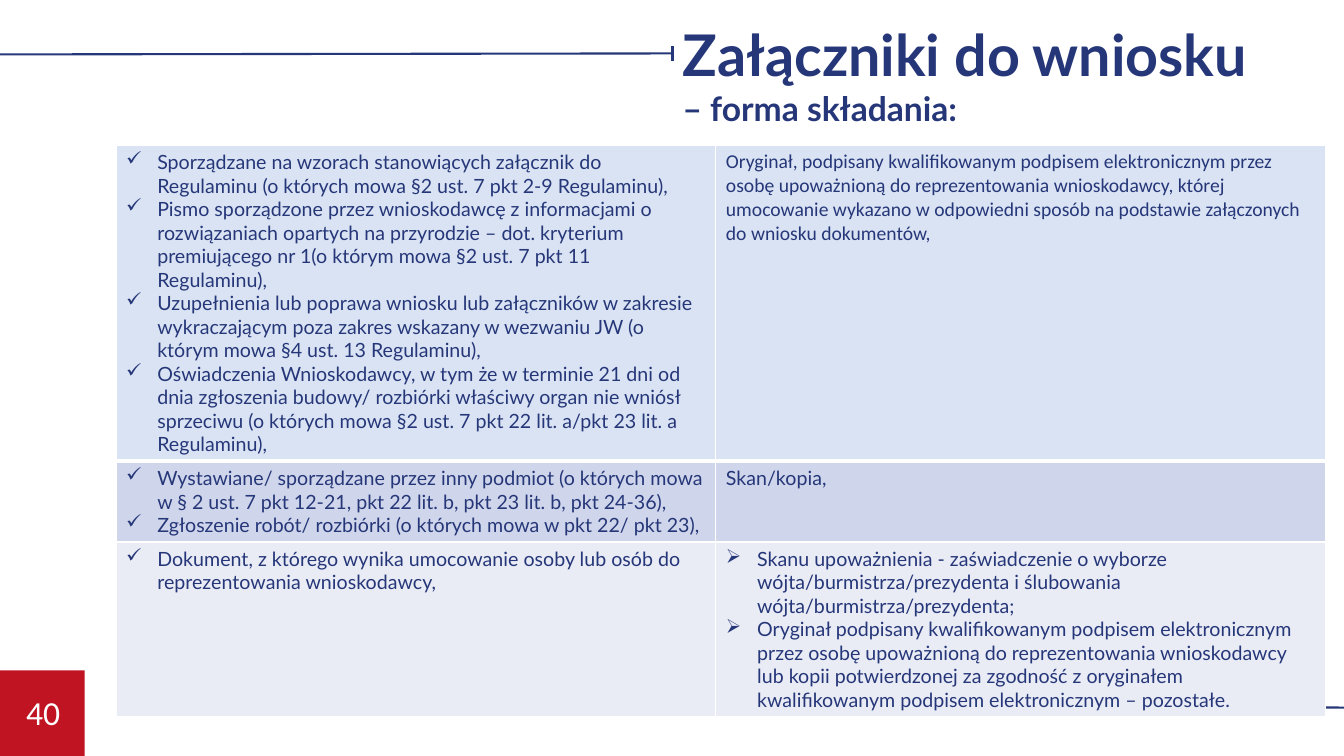
"""Build the slide on how attachments to the application are submitted."""
from dataclasses import dataclass

from lxml import etree
from pptx import Presentation
from pptx.dml.color import RGBColor
from pptx.enum.shapes import MSO_CONNECTOR, MSO_SHAPE
from pptx.enum.text import MSO_ANCHOR, MSO_AUTO_SIZE, PP_ALIGN
from pptx.oxml.ns import qn
from pptx.util import Inches, Pt

STRAIGHT = MSO_CONNECTOR.STRAIGHT
RECTANGLE = MSO_SHAPE.RECTANGLE
TOP = MSO_ANCHOR.TOP
LEFT = PP_ALIGN.LEFT
NO_AUTOFIT = MSO_AUTO_SIZE.NONE

NAVY, RED, WHITE = "263779", "C01422", "FFFFFF"
TITLE_ONLY = 5
INDENT = Inches(0.31)
COLUMN_WIDTHS = (5.95, 6.05)


@dataclass
class Rule:
    """A straight navy line, in inches."""
    x1: float
    y1: float
    x2: float
    y2: float


@dataclass
class Entry:
    """The contents of one table cell."""
    lines: list[str]
    bullet: str = ""
    font: str = "Lato"


@dataclass
class Row:
    """One table row with its look."""
    height: float
    fill: str
    top_border: float
    bottom_border: float
    entries: tuple[Entry, Entry]


RULES = [
    Rule(0, 0.54, 6.67, 0.53),
    Rule(6.67, 0.46, 6.67, 0.61),
    Rule(13.33, 7.02, 6.67, 6.98),
]

ROWS = [
    Row(3.13, "DAE3F3", 1, 3, (
        Entry([
            "Sporządzane na wzorach stanowiących załącznik do Regulaminu "
            "(o których mowa §2 ust. 7 pkt 2-9 Regulaminu),",
            "Pismo sporządzone przez wnioskodawcę z informacjami o rozwiązaniach "
            "opartych na przyrodzie – dot. kryterium premiującego nr 1(o którym "
            "mowa §2 ust. 7 pkt 11 Regulaminu),",
            "Uzupełnienia lub poprawa wniosku lub załączników w zakresie "
            "wykraczającym poza zakres wskazany w wezwaniu JW (o którym mowa "
            "§4 ust. 13 Regulaminu),",
            "Oświadczenia Wnioskodawcy, w tym że w terminie 21 dni od dnia "
            "zgłoszenia budowy/ rozbiórki właściwy organ nie wniósł sprzeciwu "
            "(o których mowa §2 ust. 7 pkt 22 lit. a/pkt 23 lit. a Regulaminu),",
        ], "✓"),
        Entry([
            "Oryginał, podpisany kwalifikowanym podpisem elektronicznym przez "
            "osobę upoważnioną do reprezentowania wnioskodawcy, której umocowanie "
            "wykazano w odpowiedni sposób na podstawie załączonych do wniosku "
            "dokumentów,",
        ], font="Calibri"),
    )),
    Row(0.8, "CFD5EA", 3, 1, (
        Entry([
            "Wystawiane/ sporządzane przez inny podmiot (o których mowa w § 2 "
            "ust. 7 pkt 12-21, pkt 22 lit. b, pkt 23 lit. b, pkt 24-36),",
            "Zgłoszenie robót/ rozbiórki (o których mowa w pkt 22/ pkt 23),",
        ], "✓"),
        Entry(["Skan/kopia,"]),
    )),
    Row(1.73, "E9EBF5", 1, 1, (
        Entry([
            "Dokument, z którego wynika umocowanie osoby lub osób do "
            "reprezentowania wnioskodawcy,",
        ], "✓"),
        Entry([
            "Skanu upoważnienia - zaświadczenie o wyborze "
            "wójta/burmistrza/prezydenta i ślubowania "
            "wójta/burmistrza/prezydenta;",
            "Oryginał podpisany kwalifikowanym podpisem elektronicznym przez "
            "osobę upoważnioną do reprezentowania wnioskodawcy lub kopii "
            "potwierdzonej za zgodność z oryginałem kwalifikowanym podpisem "
            "elektronicznym – pozostałe.",
        ], "➢"),
    )),
]


def set_color(target, color: str) -> None:
    """Give a fill or a font a solid colour from a hex string."""
    if hasattr(target, "solid"):
        target.solid()
        target.fore_color.rgb = RGBColor.from_string(color)
    else:
        target.color.rgb = RGBColor.from_string(color)


def format_spans(para, font: str, size: float, color: str, bold: bool = False) -> None:
    """Format every run of a paragraph and align it left."""
    para.alignment = LEFT
    for span in para.runs:
        span.font.name = font
        span.font.size = Pt(size)
        span.font.bold = bold
        set_color(span.font, color)


def add_rule(page, rule: Rule) -> None:
    """Draw one navy line without a shadow."""
    line = page.shapes.add_connector(
        STRAIGHT, Inches(rule.x1), Inches(rule.y1), Inches(rule.x2), Inches(rule.y2))
    line.line.width = Pt(1.5)
    set_color(line.line.fill, NAVY)
    etree.SubElement(line._element.spPr, qn("a:effectLst"))


def add_page_number(page, number: str) -> None:
    """Draw the red corner square and the page number on it."""
    square = page.shapes.add_shape(
        RECTANGLE, Inches(-0.02), Inches(6.65), Inches(0.86), Inches(0.85))
    square.shadow.inherit = False
    set_color(square.fill, RED)
    square.line.fill.background()
    box = page.shapes.add_textbox(Inches(0.16), Inches(6.82), Inches(0.57), Inches(0.5))
    box.text_frame.word_wrap = True
    box.text_frame.text = number
    format_spans(box.text_frame.paragraphs[0], "Calibri", 24, WHITE)


def fill_title(page) -> None:
    """Place and format the two-line title."""
    title = page.shapes.title
    title.left, title.top = Inches(6.67), Inches(0.14)
    title.width, title.height = Inches(6.48), Inches(1.19)
    frame = title.text_frame
    frame.auto_size = NO_AUTOFIT
    frame.vertical_anchor = TOP
    frame.text = "Załączniki do wniosku\n– forma składania:"
    for para, size in zip(frame.paragraphs, (41, 24)):
        format_spans(para, "Lato", size, NAVY, bold=True)


def add_bullet(para, symbol: str) -> None:
    """Give a paragraph a bullet with a hanging indent."""
    properties = para._p.get_or_add_pPr()
    properties.set("marL", str(INDENT))
    properties.set("indent", str(-INDENT))
    etree.SubElement(properties, qn("a:buChar"), char=symbol)


def set_borders(cell, top: float, bottom: float) -> None:
    """Draw white borders around a cell."""
    properties = cell._tc.get_or_add_tcPr()
    widths = {"a:lnL": 1, "a:lnR": 1, "a:lnT": top, "a:lnB": bottom}
    for position, (tag, width) in enumerate(widths.items()):
        border = etree.Element(qn(tag), w=str(Pt(width)))
        fill = etree.SubElement(border, qn("a:solidFill"))
        etree.SubElement(fill, qn("a:srgbClr"), val=WHITE)
        properties.insert(position, border)


def fill_cell(cell, entry: Entry, row: Row) -> None:
    """Write and format one table cell."""
    set_color(cell.fill, row.fill)
    set_borders(cell, row.top_border, row.bottom_border)
    cell.text_frame.text = "\n".join(entry.lines)
    for para in cell.text_frame.paragraphs:
        format_spans(para, entry.font, 14, NAVY)
        if entry.bullet:
            add_bullet(para, entry.bullet)


def add_attachment_table(page) -> None:
    """Add the table of attachments and their required forms."""
    height = sum(row.height for row in ROWS)
    table = page.shapes.add_table(
        len(ROWS), len(COLUMN_WIDTHS), Inches(1.15), Inches(1.44),
        Inches(sum(COLUMN_WIDTHS)), Inches(height)).table
    table.first_row = table.horz_banding = False
    for column, width in zip(table.columns, COLUMN_WIDTHS):
        column.width = Inches(width)
    for table_row, row in zip(table.rows, ROWS):
        table_row.height = Inches(row.height)
        for cell, entry in zip(table_row.cells, row.entries):
            fill_cell(cell, entry, row)


def main() -> None:
    """Build and save the deck."""
    deck = Presentation()
    deck.slide_width, deck.slide_height = Inches(13.33), Inches(7.5)
    page = deck.slides.add_slide(deck.slide_layouts[TITLE_ONLY])
    add_page_number(page, "40")
    for rule in RULES:
        add_rule(page, rule)
    fill_title(page)
    add_attachment_table(page)
    deck.save("out.pptx")


if __name__ == "__main__":
    main()
